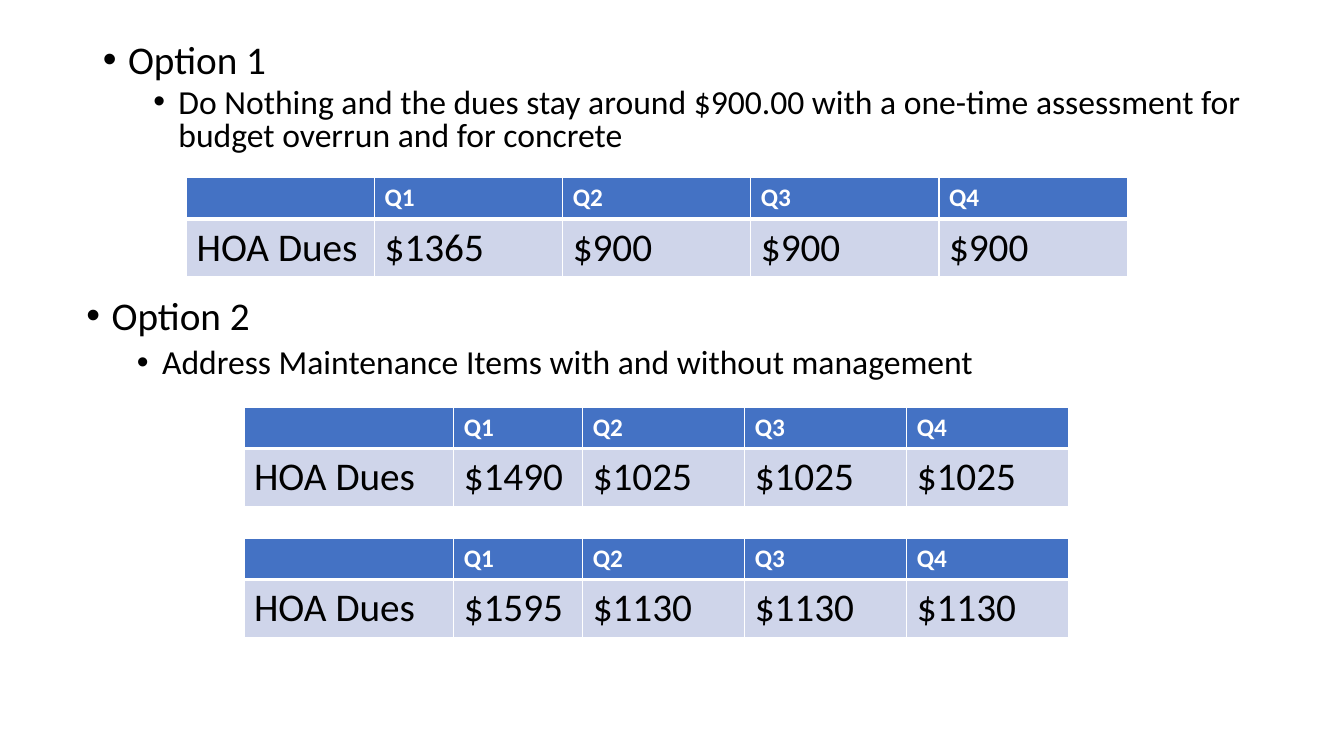
import pptx
import pptx.util
import pptx.dml.color
import pptx.enum.text
import pptx.oxml.ns
import lxml.etree

Inches = pptx.util.Inches
Pt = pptx.util.Pt

COLORS = {"text": "000000", "white": "FFFFFF", "header": "4472C4", "band": "CFD5EA"}
FONT = "Calibri"

OPTIONS = [
    {
        "box": (0.92, 0.39, 11.5, 1.3),
        "line_spacing": 0.8,
        "lines": [
            "Option 1",
            "Do Nothing and the dues stay around $900.00 with a one-time assessment "
            "for budget overrun and for concrete",
        ],
    },
    {
        "box": (0.76, 2.89, 11.5, 1.3),
        "line_spacing": 0.9,
        "lines": ["Option 2", "Address Maintenance Items with and without management"],
    },
]
LEVELS = [
    {"indent": 0.25, "size": 28, "space_before": 10},
    {"indent": 0.75, "size": 24, "space_before": 5},
]

HEADER = ["", "Q1", "Q2", "Q3", "Q4"]
EQUAL_COLUMNS = [1.866] * 5
NARROW_COLUMNS = [2.08, 1.28] + [1.607] * 3
DUES_TABLES = [
    {"at": (1.85, 1.76), "columns": EQUAL_COLUMNS, "dues": ["$1365"] + ["$900"] * 3},
    {"at": (2.42, 4.04), "columns": NARROW_COLUMNS, "dues": ["$1490"] + ["$1025"] * 3},
    {"at": (2.42, 5.34), "columns": NARROW_COLUMNS, "dues": ["$1595"] + ["$1130"] * 3},
]
ROWS = [
    {"height": 0.41, "fill": "header", "color": "white", "size": 18, "bold": True,
     "borders": {"L": 1, "R": 1, "T": 1, "B": 3}},
    {"height": 0.56, "fill": "band", "color": "text", "size": 28, "bold": False,
     "borders": {"L": 1, "R": 1, "T": 3, "B": 1}},
]


def color(name):
    return pptx.dml.color.RGBColor.from_string(COLORS[name])


def add_element(parent, tag, **attributes):
    element = lxml.etree.SubElement(parent, pptx.oxml.ns.qn(tag))
    for name, value in attributes.items():
        element.set(name, str(value))
    return element


def add_run(paragraph, text, color_name, size, bold=False):
    run = paragraph.add_run()
    run.text = text
    font_format = {"name": FONT, "size": Pt(size), "bold": bold}
    for name, value in font_format.items():
        setattr(run.font, name, value)
    run.font.color.rgb = color(color_name)


def fill_option(shape, option):
    for name, value in zip(("left", "top", "width", "height"), option["box"]):
        setattr(shape, name, Inches(value))
    text_frame = shape.text_frame
    frame_format = {
        "word_wrap": True,
        "auto_size": pptx.enum.text.MSO_AUTO_SIZE.NONE,
        "vertical_anchor": pptx.enum.text.MSO_ANCHOR.TOP,
    }
    for name, value in frame_format.items():
        setattr(text_frame, name, value)
    for index, (text, level) in enumerate(zip(option["lines"], LEVELS)):
        paragraph = text_frame.add_paragraph() if index else text_frame.paragraphs[0]
        paragraph_format = {
            "level": index,
            "line_spacing": option["line_spacing"],
            "space_before": Pt(level["space_before"]),
            "space_after": Pt(0),
        }
        for name, value in paragraph_format.items():
            setattr(paragraph, name, value)
        add_run(paragraph, text, "text", level["size"])
        properties = paragraph._p.get_or_add_pPr()
        properties.set("marL", str(Inches(level["indent"])))
        properties.set("indent", str(Inches(-0.25)))
        add_element(properties, "a:buFont", typeface="Arial")
        add_element(properties, "a:buChar", char="•")


def format_cell(cell, text, row):
    properties = cell._tc.get_or_add_tcPr()
    for side, width in row["borders"].items():
        line = add_element(properties, "a:ln" + side, w=Pt(width))
        add_element(add_element(line, "a:solidFill"), "a:srgbClr", val=COLORS["white"])
    cell.fill.solid()
    cell.fill.fore_color.rgb = color(row["fill"])
    if text:
        add_run(cell.text_frame.paragraphs[0], text, row["color"], row["size"], row["bold"])


def add_dues_table(slide, dues_table):
    left, top = dues_table["at"]
    widths = dues_table["columns"]
    height = sum(row["height"] for row in ROWS)
    table = slide.shapes.add_table(
        len(ROWS), len(widths), Inches(left), Inches(top), Inches(sum(widths)), Inches(height)
    ).table
    for column, width in zip(table.columns, widths):
        column.width = Inches(width)
    contents = [HEADER, ["HOA Dues"] + dues_table["dues"]]
    for table_row, row, texts in zip(table.rows, ROWS, contents):
        table_row.height = Inches(row["height"])
        for cell, text in zip(table_row.cells, texts):
            format_cell(cell, text, row)


def main():
    presentation = pptx.Presentation()
    presentation.slide_width = Inches(13.33)
    presentation.slide_height = Inches(7.5)
    slide = presentation.slides.add_slide(presentation.slide_layouts[1])
    title = slide.shapes.title
    title._element.getparent().remove(title._element)

    fill_option(slide.placeholders[1], OPTIONS[0])
    add_dues_table(slide, DUES_TABLES[0])
    box = [Inches(value) for value in OPTIONS[1]["box"]]
    fill_option(slide.shapes.add_textbox(*box), OPTIONS[1])
    for dues_table in DUES_TABLES[1:]:
        add_dues_table(slide, dues_table)
    presentation.save("out.pptx")


if __name__ == "__main__":
    main()
